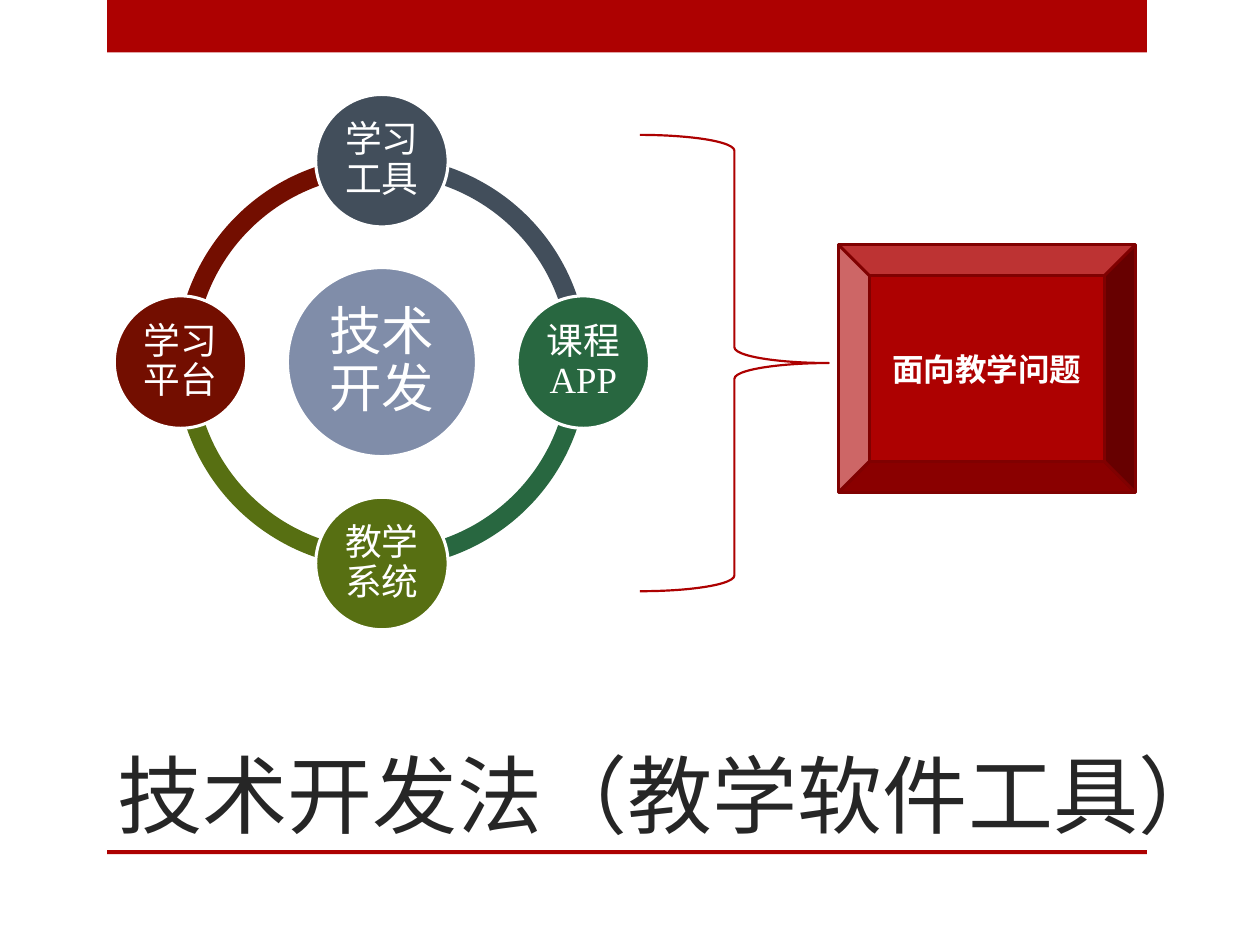
import math
from pptx import Presentation
from pptx import util as u
from pptx.dml.color import RGBColor
from pptx.enum import shapes, text

RED = RGBColor(0xAD, 0x01, 0x01)
DARK = RGBColor(0x80, 0x01, 0x01)
INK = RGBColor(0x26, 0x26, 0x26)
WHITE = RGBColor(0xFF, 0xFF, 0xFF)
HUB = RGBColor(0x80, 0x8D, 0xA9)
SLATE = RGBColor(0x42, 0x4E, 0x5B)
GREEN = RGBColor(0x28, 0x67, 0x40)
OLIVE = RGBColor(0x57, 0x6F, 0x12)
MAROON = RGBColor(0x73, 0x0E, 0x00)
KIND = shapes.MSO_SHAPE


def write(frame, words, size, color=WHITE, font="Times New Roman", bold=False,
          align=text.PP_ALIGN.CENTER, anchor=text.MSO_ANCHOR.MIDDLE,
          space=None, inset=None):
    frame.word_wrap = True
    frame.auto_size = text.MSO_AUTO_SIZE.NONE
    frame.vertical_anchor = anchor
    if inset is not None:
        frame.margin_left = frame.margin_right = u.Cm(inset)
        frame.margin_top = frame.margin_bottom = u.Cm(inset)
    para = frame.paragraphs[0]
    para.alignment = align
    if space:
        para.line_spacing = space
    run = para.add_run()
    run.text = words
    run.font.size = u.Pt(size)
    run.font.name = font
    run.font.bold = bold
    run.font.color.rgb = color


class Deck:
    def __init__(self, slide):
        self.slide = slide

    def title(self, words, box):
        item = self.slide.shapes.title
        item.left, item.top, item.width, item.height = map(u.Cm, box)
        write(item.text_frame, words, 48.6, color=INK, font="Roboto Condensed",
              align=text.PP_ALIGN.LEFT, anchor=text.MSO_ANCHOR.BOTTOM)

    def shape(self, kind, box, fill=None, line=None, width=1.75, home=None):
        home = home or self.slide.shapes
        item = home.add_shape(kind, *map(u.Cm, box))
        item.shadow.inherit = False
        if fill is None:
            item.fill.background()
        else:
            item.fill.solid()
            item.fill.fore_color.rgb = fill
        if line is None:
            item.line.fill.background()
        else:
            item.line.color.rgb = line
            item.line.width = u.Pt(width)
        return item

    def disc(self, home, words, mid, size, fill, font, inset):
        x, y = mid
        box = (x - size / 2, y - size / 2, size, size)
        item = self.shape(KIND.OVAL, box, fill, WHITE, home=home)
        write(item.text_frame, words, font, space=0.9, inset=inset)

    def cycle(self, mid, hub, nodes):
        x, y = mid
        size, reach = 8.31, 4.06
        home = self.slide.shapes.add_group_shape().shapes
        box = (x - size / 2, y - size / 2, size, size)
        step = 216 / len(nodes)
        for i, (_, fill) in reversed(list(enumerate(nodes))):
            arc = self.shape(KIND.BLOCK_ARC, box, fill, home=home)
            start = (162 + i * step) % 216
            for k, val in enumerate((start, (start + step) % 216, 0.046)):
                arc.adjustments[k] = val
        self.disc(home, hub, mid, 3.81, HUB, 30, 0.1)
        for i, (words, fill) in enumerate(nodes):
            turn = math.tau * i / len(nodes)
            spot = (x + reach * math.sin(turn), y - reach * math.cos(turn))
            self.disc(home, words, spot, 2.67, fill, 21, 0.07)


def main():
    show = Presentation()
    show.slide_width, show.slide_height = u.Cm(25.4), u.Cm(19.05)
    deck = Deck(show.slides.add_slide(show.slide_layouts[5]))
    for top, high in ((0, 1.06), (17.14, 0.08)):
        deck.shape(KIND.RECTANGLE, (2.16, top, 20.96, high), RED)
    deck.title("技术开发法（教学软件工具）", (2.11, 12.7, 23.29, 4.45))
    deck.cycle((7.7, 7.3), "技术开发", (
        ("学习工具", SLATE),
        ("课程APP", GREEN),
        ("教学系统", OLIVE),
        ("学习平台", MAROON),
    ))
    deck.shape(KIND.RIGHT_BRACE, (12.9, 2.72, 3.81, 9.2), line=RED, width=1.25)
    goal = deck.shape(KIND.BEVEL, (16.9, 4.93, 5.99, 5), RED, DARK)
    write(goal.text_frame, "面向教学问题", 18, bold=True)
    show.save("out.pptx")


if __name__ == "__main__":
    main()
